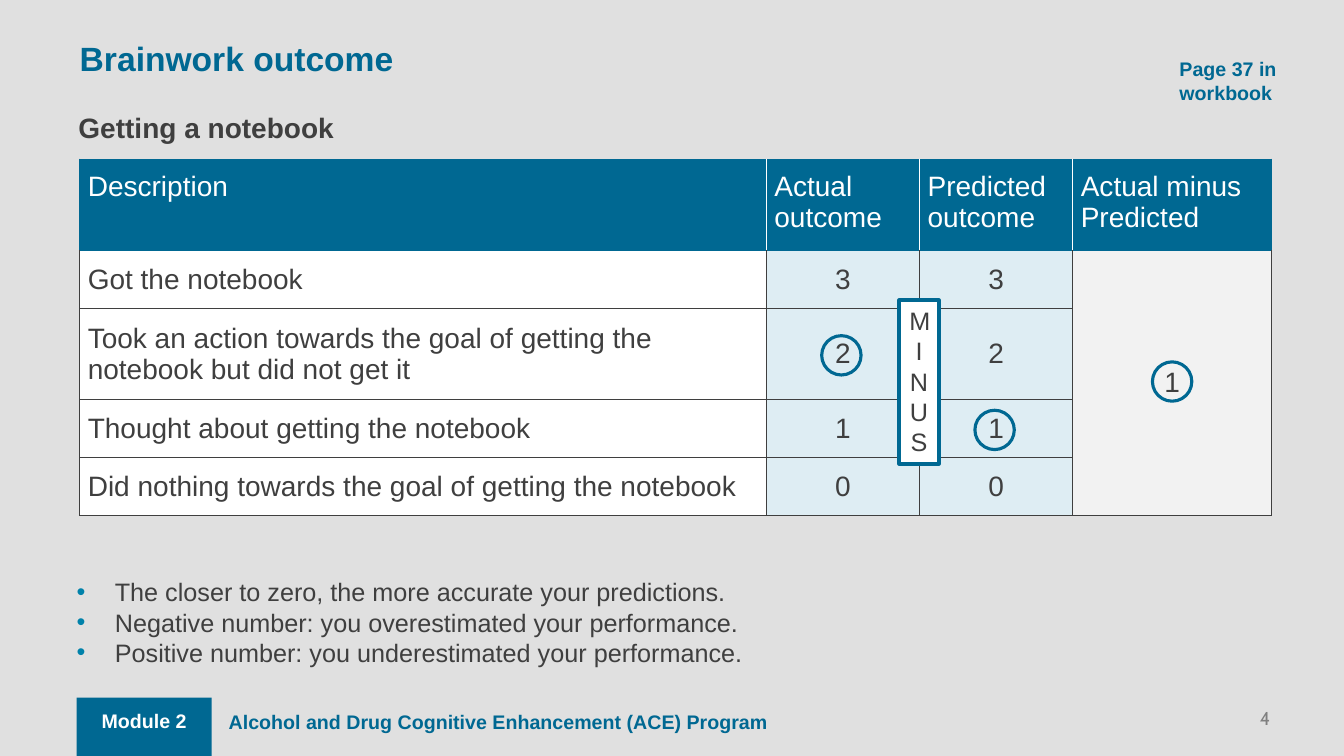
from pptx import Presentation
from pptx.dml.color import RGBColor as Color
from pptx.enum.shapes import MSO_SHAPE as Shape
from pptx.enum.text import MSO_ANCHOR as Anchor, PP_ALIGN as Align
from pptx.oxml.ns import qn
from pptx.util import Inches, Pt
from lxml.etree import SubElement

COLORS = {
    "brand": "006892", "ink": "3F3F3F", "white": "FFFFFF", "page": "E0E0E0",
    "score": "DEEDF3", "result": "F2F2F2", "bullet": "0082AA", "muted": "808080",
}


def color(name):
    return Color.from_string(COLORS[name])


class SlideBuilder:
    """Holds the style and the current slide; lengths are percent of the slide."""

    font = "Arial"
    default_insets = (0.1, 0.05, 0.1, 0.05)
    cell_insets = (0.08, 0.12, 0.08, 0.12)

    def __init__(self, deck):
        self.deck = deck
        self.page = deck.slides.add_slide(deck.slide_layouts[5])
        background = self.page.background.fill
        background.solid()
        background.fore_color.rgb = color("page")

    def across(self, share):
        return round(self.deck.slide_width * share / 100)

    def down(self, share):
        return round(self.deck.slide_height * share / 100)

    def place(self, left, top, width, height):
        return self.across(left), self.down(top), self.across(width), self.down(height)

    def fill_text(self, frame, lines, size, ink="ink", bold=False, align=Align.LEFT,
                  before=0, insets=default_insets, anchor=Anchor.TOP, font=font):
        frame.word_wrap = True
        frame.vertical_anchor = anchor
        (frame.margin_left, frame.margin_top,
         frame.margin_right, frame.margin_bottom) = map(Inches, insets)
        for index, line in enumerate(lines):
            para = frame.add_paragraph() if index else frame.paragraphs[0]
            para.alignment = align
            para.space_before = Pt(before)
            span = para.add_run()
            span.text = line
            span.font.name = font
            span.font.size = Pt(size)
            span.font.bold = bold
            span.font.color.rgb = color(ink)

    def title(self, area, text, **style):
        box = self.page.shapes.title
        box.left, box.top, box.width, box.height = self.place(*area)
        self.fill_text(box.text_frame, [text], **style)

    def text(self, area, *lines, **style):
        box = self.page.shapes.add_textbox(*self.place(*area))
        self.fill_text(box.text_frame, lines, **style)
        return box

    def bullets(self, area, *lines, **style):
        box = self.text(area, *lines, **style)
        indent = Inches(0.38)
        for para in box.text_frame.paragraphs:
            props = para._p.get_or_add_pPr()
            props.set("marL", str(indent))
            props.set("indent", str(-indent))
            tint = SubElement(props, qn("a:buClr"))
            SubElement(tint, qn("a:srgbClr"), val=COLORS["bullet"])
            SubElement(props, qn("a:buFont"), typeface=self.font)
            SubElement(props, qn("a:buChar"), char="•")

    def shape(self, kind, area, fill=None, line=None, weight=2.25):
        shape = self.page.shapes.add_shape(kind, *self.place(*area))
        shape.shadow.inherit = False
        if fill:
            shape.fill.solid()
            shape.fill.fore_color.rgb = color(fill)
        else:
            shape.fill.background()
        if line:
            shape.line.color.rgb = color(line)
            shape.line.width = Pt(weight)
        else:
            shape.line.fill.background()
        return shape

    def ring(self, left, top):
        self.shape(Shape.OVAL, (left, top, 2.93, 5.2), line="brand")

    def table(self, left, top, widths, heights):
        area = self.place(left, top, sum(widths), sum(heights))
        table = self.page.shapes.add_table(len(heights), len(widths), *area).table
        table.first_row = table.horz_banding = False
        for column, width in zip(table.columns, widths):
            column.width = self.across(width)
        for row, height in zip(table.rows, heights):
            row.height = self.down(height)
        return table

    def cell(self, cell, text, fill, borders, **style):
        cell.fill.solid()
        cell.fill.fore_color.rgb = color(fill)
        if text:
            self.fill_text(cell.text_frame, [text], size=20, insets=self.cell_insets, **style)
        # Margins and anchor of a table cell belong to the cell itself
        (cell.margin_left, cell.margin_top,
         cell.margin_right, cell.margin_bottom) = map(Inches, self.cell_insets)
        cell.vertical_anchor = style.get("anchor", Anchor.TOP)
        props = cell._tc.get_or_add_tcPr()
        for index, (side, name) in enumerate(zip("LRTB", borders)):
            edge = SubElement(props, qn("a:ln" + side), w=str(Pt(1)))
            paint = SubElement(edge, qn("a:solidFill"))
            SubElement(paint, qn("a:srgbClr"), val=COLORS[name])
            props.insert(index, edge)


def main():
    deck = Presentation()
    deck.slide_width, deck.slide_height = Inches(13.33), Inches(7.5)
    slide = SlideBuilder(deck)
    flush = (0, 0, 0, 0)
    label = dict(size=14, ink="brand", bold=True)

    # Footer
    slide.shape(Shape.RECTANGLE, (5.7, 92.27, 10.05, 7.73), fill="brand")
    slide.text((16.28, 93.2, 83.5, 6.27),
               "Alcohol and Drug Cognitive Enhancement (ACE) Program", before=8, **label)
    slide.text((5.7, 93.07, 10.05, 4.53), "Module 2", size=14, ink="white", bold=True,
               align=Align.CENTER, before=8)
    slide.text((79.52, 93.47, 15, 2.67), "4", size=13.3, ink="muted", font="Cabin",
               align=Align.RIGHT, insets=flush)

    # Headings
    slide.title((5.93, 4.53, 66.92, 6.27), "Brainwork outcome", size=24, ink="brand",
                bold=True, before=8, insets=flush, anchor=Anchor.MIDDLE)
    slide.text((5.1, 14, 30.91, 5.87), "Getting a notebook", size=20, bold=True)
    slide.text((87.02, 6.93, 10.35, 7.6), "Page 37 in workbook", **label)

    # Outcome table
    headers = ["Description", "Actual outcome", "Predicted outcome", "Actual minus Predicted"]
    outcomes = [
        ("Got the notebook", "3", "3", "1"),
        ("Took an action towards the goal of getting the notebook but did not get it",
         "2", "2", ""),
        ("Thought about getting the notebook", "1", "1", ""),
        ("Did nothing towards the goal of getting the notebook", "0", "0", ""),
    ]
    fills = ["white", "score", "score", "result"]
    table = slide.table(5.93, 21.07, [51.09, 11.4, 11.4, 14.78], [12, 7.6, 12, 7.6, 7.6])
    last = len(headers) - 1
    for column, header in enumerate(headers):
        borders = ("white" if column else "brand",
                   "white" if column < last else "brand", "brand", "brand")
        slide.cell(table.cell(0, column), header, "brand", borders, ink="white")
    for row, outcome in enumerate(outcomes, 1):
        borders = ("ink", "ink", "brand" if row == 1 else "ink", "ink")
        for column, (value, fill) in enumerate(zip(outcome, fills)):
            slide.cell(table.cell(row, column), value, fill, borders, anchor=Anchor.MIDDLE,
                       align=Align.CENTER if column else Align.LEFT)
    table.cell(1, last).merge(table.cell(len(outcomes), last))

    # Rings around the chosen scores, and the minus sign between them
    for left, top in [(72.54, 54.27), (61.14, 44.4), (85.75, 47.87)]:
        slide.ring(left, top)
    minus = slide.shape(Shape.RECTANGLE, (66.92, 39.73, 2.93, 21.6),
                        fill="white", line="brand", weight=2.75)
    slide.fill_text(minus.text_frame, ["MINUS"], size=18, align=Align.CENTER)

    # Reading the result
    slide.bullets((5.7, 76.27, 88.6, 12.93),
                  "The closer to zero, the more accurate your predictions.",
                  "Negative number: you overestimated your performance.",
                  "Positive number: you underestimated your performance.",
                  size=18, insets=flush)

    deck.save("out.pptx")


if __name__ == "__main__":
    main()
